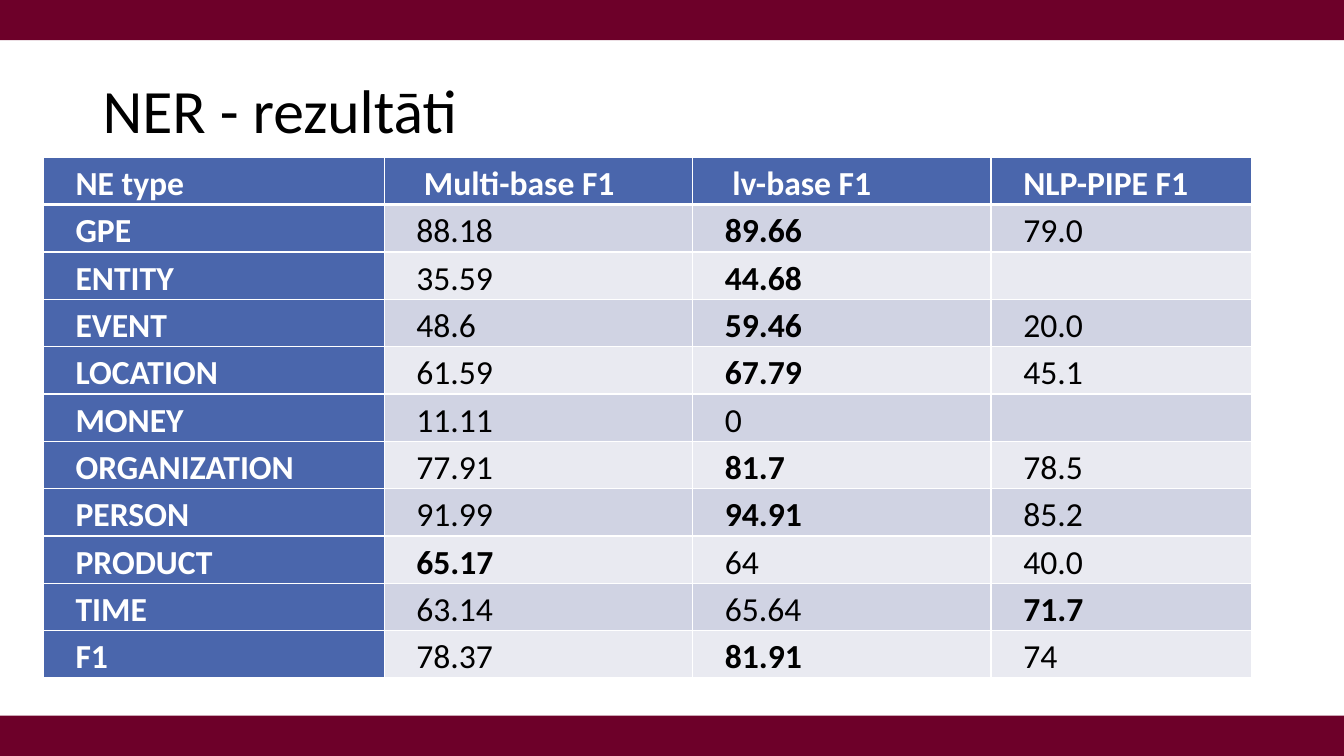
"""Build the slide with NER F1 results per entity type."""
from lxml import etree
from pptx import Presentation, util as u
from pptx.dml.color import RGBColor
from pptx.enum import shapes, text
from pptx.oxml.ns import qn

MAROON = RGBColor(0x6D, 0x00, 0x29)
BLUE = RGBColor(0x4A, 0x66, 0xAC)
BAND_DARK = RGBColor(0xD0, 0xD3, 0xE3)
BAND_LIGHT = RGBColor(0xE9, 0xEA, 0xF1)
WHITE = RGBColor(0xFF, 0xFF, 0xFF)
BLACK = RGBColor(0x00, 0x00, 0x00)
FONT = "Calibri"

HEADINGS = ["NE type", " Multi-base F1", " lv-base F1", "NLP-PIPE F1"]
RESULTS = [
    ["GPE", "88.18", "89.66", "79.0"],
    ["ENTITY", "35.59", "44.68", ""],
    ["EVENT", "48.6", "59.46", "20.0"],
    ["LOCATION", "61.59", "67.79", "45.1"],
    ["MONEY", "11.11", "0", ""],
    ["ORGANIZATION", "77.91", "81.7", "78.5"],
    ["PERSON", "91.99", "94.91", "85.2"],
    ["PRODUCT", "65.17", "64", "40.0"],
    ["TIME", "63.14", "65.64", "71.7"],
    ["F1", "78.37", "81.91", "74"],
]
BEST_SCORES = {"89.66", "44.68", "59.46", "67.79", "81.7", "94.91", "65.17", "71.7", "81.91"}
COLUMN_WIDTHS = [3.38, 3.06, 2.96, 2.58]
ROW_HEIGHT = 0.47


def add_border(cell, side, position, points):
    line = etree.Element(qn(f"a:ln{side}"), w=str(u.Pt(points)))
    fill = etree.SubElement(line, qn("a:solidFill"))
    etree.SubElement(fill, qn("a:srgbClr"), val=str(WHITE))
    cell._tc.get_or_add_tcPr().insert(position, line)


prs = Presentation()
prs.slide_width, prs.slide_height = u.Inches(13.33), u.Inches(7.5)
slide = prs.slides.add_slide(prs.slide_layouts[6])

for band_top in (0, 7.1):
    band = slide.shapes.add_shape(shapes.MSO_SHAPE.RECTANGLE, 0, u.Inches(band_top),
                                  prs.slide_width, u.Inches(0.4))
    band.shadow.inherit = False
    band.fill.solid()
    band.fill.fore_color.rgb = MAROON
    band.line.fill.background()

title = slide.shapes.add_textbox(u.Inches(0.92), u.Inches(0.4), u.Inches(11.5), u.Inches(1.45)).text_frame
title.word_wrap = True
title.vertical_anchor = text.MSO_ANCHOR.MIDDLE
heading = title.paragraphs[0]
heading.text = "NER - rezultāti"
heading.line_spacing = 0.9
heading.font.name, heading.font.size = FONT, u.Pt(44)
heading.font.color.rgb = BLACK

rows = [HEADINGS] + RESULTS
scores = slide.shapes.add_table(len(rows), len(HEADINGS), u.Inches(0.43), u.Inches(1.56),
                                u.Inches(sum(COLUMN_WIDTHS)), u.Inches(ROW_HEIGHT * len(rows))).table
scores.first_col = True
for column, width in zip(scores.columns, COLUMN_WIDTHS):
    column.width = u.Inches(width)

for r, values in enumerate(rows):
    scores.rows[r].height = u.Inches(ROW_HEIGHT)
    for c, value in enumerate(values):
        cell = scores.cell(r, c)
        is_label = r == 0 or c == 0
        cell.margin_left = cell.margin_right = u.Inches(0.07)
        cell.margin_top = cell.margin_bottom = 0
        cell.vertical_anchor = text.MSO_ANCHOR.BOTTOM
        cell.fill.solid()
        cell.fill.fore_color.rgb = BLUE if is_label else BAND_DARK if r % 2 else BAND_LIGHT
        for position, side in enumerate("LRTB"):
            thick = (r == 0 and side == "B") or (r == 1 and side == "T")
            add_border(cell, side, position, 3 if thick else 1)

        entry = cell.text_frame.paragraphs[0]
        entry.text = value
        entry.alignment = text.PP_ALIGN.JUSTIFY
        entry.line_spacing = u.Pt(12)
        entry._p.get_or_add_pPr().set("indent", str(u.Inches(0.25)))
        entry.font.name, entry.font.size = FONT, u.Pt(24)
        entry.font.bold = is_label or value in BEST_SCORES
        entry.font.color.rgb = WHITE if is_label else BLACK

prs.save("out.pptx")
